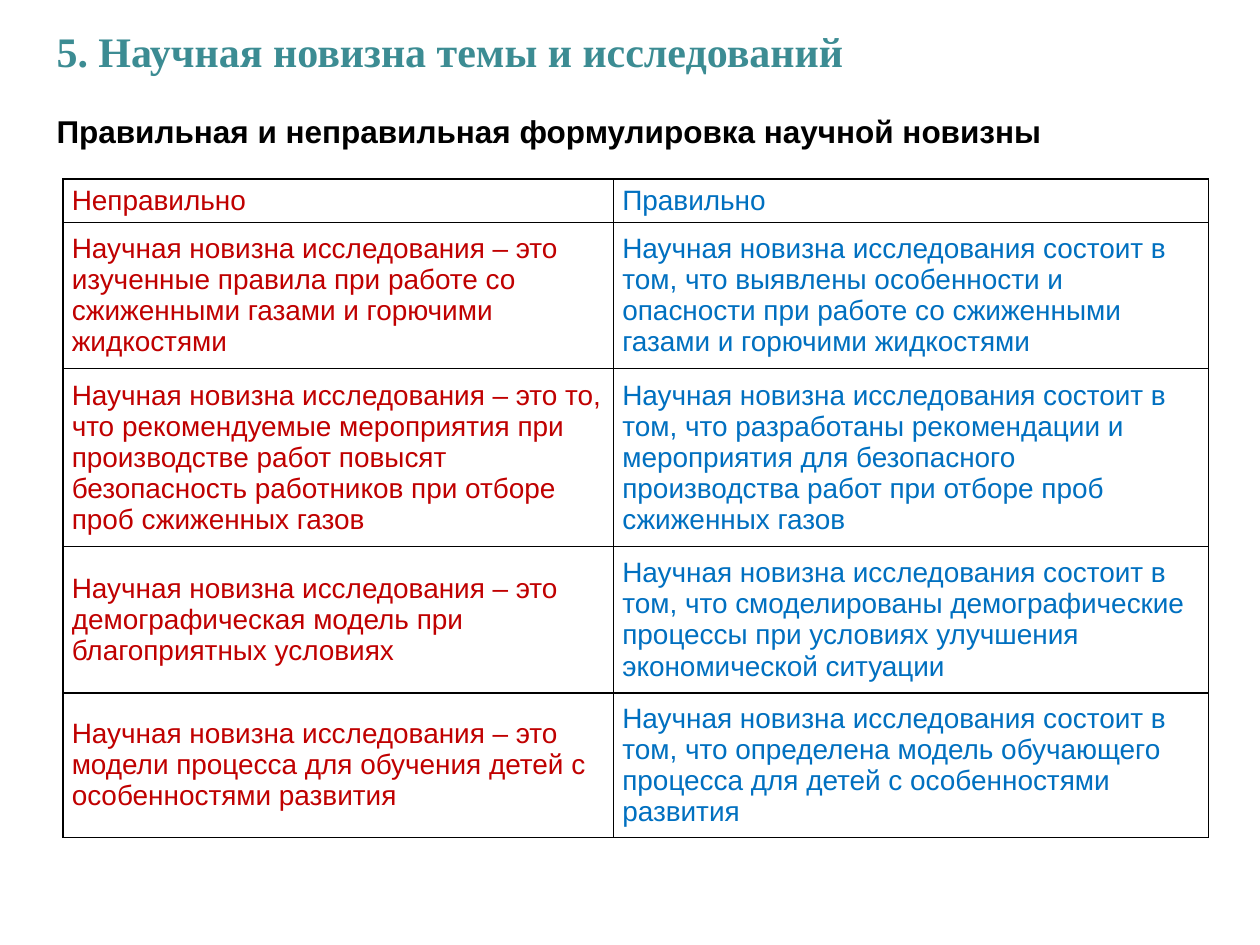
from dataclasses import dataclass

from lxml import etree
from pptx import Presentation
from pptx import util as u
from pptx.dml.color import RGBColor
from pptx.enum import text
from pptx.oxml.ns import qn

RED, BLUE, TEAL, BLACK = "C00000", "0070C0", "3C8C93", "000000"
WRONG = "Научная новизна исследования – это "
RIGHT = "Научная новизна исследования состоит в том, что "


@dataclass
class Style:
    size: float
    hue: str
    font: str = "Arial"
    bold: bool = False


@dataclass
class Head:
    words: str
    top: float
    high: float
    style: Style


@dataclass
class Row:
    high: float
    wrong: str
    right: str


HEADS = [
    Head("5. Научная новизна темы и исследований", 0.15, 0.5,
         Style(24, TEAL, "Times New Roman", True)),
    Head("Правильная и неправильная формулировка научной новизны", 0.84, 0.4,
         Style(18, BLACK, bold=True)),
]
ROWS = [
    Row(0.29, "Неправильно", "Правильно"),
    Row(1.16,
        WRONG + "изученные правила при работе со сжиженными газами и горючими жидкостями",
        RIGHT + "выявлены особенности и опасности при работе со сжиженными газами "
        "и горючими жидкостями"),
    Row(1.38,
        WRONG + "то, что рекомендуемые мероприятия при производстве работ повысят "
        "безопасность работников при отборе проб сжиженных газов",
        RIGHT + "разработаны рекомендации и мероприятия для безопасного "
        "производства работ при отборе проб сжиженных газов"),
    Row(1.16,
        WRONG + "демографическая модель при благоприятных условиях",
        RIGHT + "смоделированы демографические процессы при условиях улучшения "
        "экономической ситуации"),
    Row(0.95,
        WRONG + "модели процесса для обучения детей с особенностями развития",
        RIGHT + "определена модель обучающего процесса для детей с особенностями развития"),
]
COLS = [4.37, 4.72]


def paint(hue: str) -> RGBColor:
    return RGBColor.from_string(hue)


def write(frame, words: str, style: Style) -> None:
    frame.word_wrap = True
    run = frame.paragraphs[0].add_run()
    run.text = words
    run.font.size = u.Pt(style.size)
    run.font.name = style.font
    run.font.bold = style.bold
    run.font.color.rgb = paint(style.hue)


def add_head(slide, head: Head) -> None:
    box = slide.shapes.add_textbox(
        u.Inches(0.35), u.Inches(head.top), u.Inches(9.15), u.Inches(head.high))
    write(box.text_frame, head.words, head.style)
    box.text_frame.auto_size = text.MSO_AUTO_SIZE.SHAPE_TO_FIT_TEXT


def add_edges(cell, hue: str, width: float) -> None:
    props = cell._tc.get_or_add_tcPr()
    for spot, side in enumerate(("lnL", "lnR", "lnT", "lnB")):
        line = etree.Element(qn(f"a:{side}"), w=str(u.Pt(width)))
        fill = etree.SubElement(line, qn("a:solidFill"))
        etree.SubElement(fill, qn("a:srgbClr"), val=hue)
        props.insert(spot, line)


def fill_cell(cell, words: str, style: Style) -> None:
    cell.fill.background()
    cell.vertical_anchor = text.MSO_ANCHOR.MIDDLE
    cell.margin_left = cell.margin_right = u.Inches(0.07)
    cell.margin_top = cell.margin_bottom = u.Inches(0.04)
    write(cell.text_frame, words, style)
    add_edges(cell, BLACK, 1)


def add_grid(slide, rows: list[Row]) -> None:
    frame = slide.shapes.add_table(
        len(rows), len(COLS), u.Inches(0.5), u.Inches(1.42),
        u.Inches(sum(COLS)), u.Inches(sum(row.high for row in rows)))
    grid = frame.table
    grid.first_row = grid.horz_banding = False
    for col, width in zip(grid.columns, COLS):
        col.width = u.Inches(width)
    for line, row in zip(grid.rows, rows):
        line.height = u.Inches(row.high)
        pairs = ((row.wrong, RED), (row.right, BLUE))
        for cell, (words, hue) in zip(line.cells, pairs):
            fill_cell(cell, words, Style(16, hue))


def main() -> None:
    deck = Presentation()
    deck.slide_width, deck.slide_height = u.Inches(10), u.Inches(7.5)
    slide = deck.slides.add_slide(deck.slide_layouts[6])
    for head in HEADS:
        add_head(slide, head)
    add_grid(slide, ROWS)
    deck.save("out.pptx")


if __name__ == "__main__":
    main()
